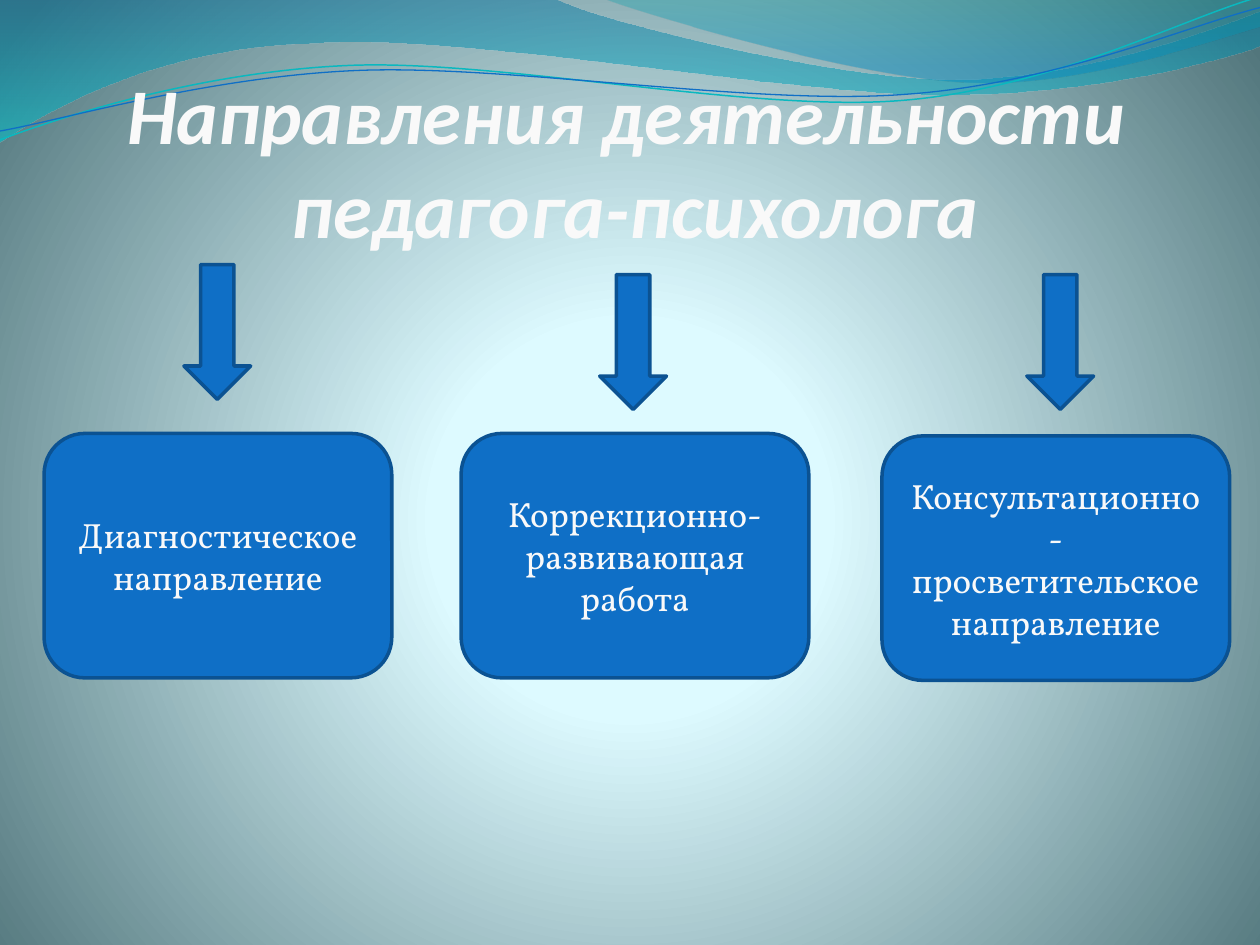
from lxml import etree
from pptx import Presentation
from pptx.dml.color import RGBColor
from pptx.enum.shapes import MSO_SHAPE
from pptx.enum.text import MSO_ANCHOR, PP_ALIGN
from pptx.oxml.ns import qn
from pptx.util import Inches, Pt

BOX, ARROW = MSO_SHAPE.ROUNDED_RECTANGLE, MSO_SHAPE.DOWN_ARROW
BOTTOM, MIDDLE = MSO_ANCHOR.BOTTOM, MSO_ANCHOR.MIDDLE
CENTER = PP_ALIGN.CENTER

HUES = {
    "text": "F9F9F9", "blue": "0F6FC6", "edge": "0B5292", "aqua": "0AB8BF",
    "glow": "DEFBFF", "pale": "DDFAFF", "slate": "52767C",
    "deep": "0074A1", "teal": "00C6CF", "green": "00A1A9", "sea": "008BBF",
}
RGB = {name: RGBColor.from_string(code) for name, code in HUES.items()}

HEAD = {"size": Pt(45), "name": "Calibri", "bold": True, "italic": True}
BODY = {"size": Pt(20), "name": "Vollkorn"}


def shade(root, stops, circle=False):
    """Fill the gradFill under root with (position, hue, alpha) stops."""
    grad = root.find(".//" + qn("a:gradFill"))
    for old in list(grad):
        grad.remove(old)
    group = etree.SubElement(grad, qn("a:gsLst"))
    for pos, hue, alpha in stops:
        stop = etree.SubElement(group, qn("a:gs"), pos=str(pos * 1000))
        tint = etree.SubElement(stop, qn("a:srgbClr"), val=HUES[hue])
        if alpha < 100:
            etree.SubElement(tint, qn("a:alpha"), val=str(alpha * 1000))
    if circle:
        ring = etree.SubElement(grad, qn("a:path"), path="circle")
        etree.SubElement(ring, qn("a:fillToRect"),
                         l="10000", t="110000", r="10000", b="100000")
    else:
        etree.SubElement(grad, qn("a:lin"), ang="5400000", scaled="0")


def write(shape, words, style, anchor):
    frame = shape.text_frame
    frame.word_wrap = True
    frame.vertical_anchor = anchor
    frame.text = words
    para = frame.paragraphs[0]
    para.alignment = CENTER
    for run in para.runs:
        run.font.color.rgb = RGB["text"]
        for key, value in style.items():
            setattr(run.font, key, value)


prs = Presentation()
prs.slide_width, prs.slide_height = Inches(10), Inches(7.5)
slide = prs.slides.add_slide(prs.slide_layouts[6])
shapes = slide.shapes

# Background glow
slide.background.fill.gradient()
shade(slide.element,
      [(0, "glow", 100), (25, "pale", 100), (100, "slate", 100)], circle=True)

# Waves: a start, then line ends (2 numbers) or Bezier curves (6 numbers)
waves = [
    ([(0, 0), (4.4, -0.01), (4.76, 0.17, 6.64, 0.63, 7.58, 0.63),
      (8.53, 0.63, 9.58, 0.26, 10, 0.09), (10.01, 0.36),
      (9.83, 0.44, 8.7, 0.76, 7.46, 0.75), (6.22, 0.75, 3.82, 0.28, 2.57, 0.34),
      (1.29, 0.36, 0.46, 0.83, -0.01, 1.13), (0, 0)],
     [(0, "deep", 45), (100, "teal", 55)], None),
    ([(4.79, -0.01), (5.09, 0.11, 6.82, 0.62, 7.69, 0.65),
      (8.56, 0.69, 9.61, 0.32, 10, 0.21), (10, 0), (4.79, -0.01)],
     [(0, "green", 30), (80, "sea", 45)], None),
    ([(0, 1.11), (0.48, 0.93, 1.58, 0.57, 2.77, 0.52),
      (3.95, 0.47, 5.93, 0.89, 7.13, 0.8), (8.33, 0.71, 9.38, 0.15, 9.98, -0.02)],
     None, ("aqua", 0.85)),
    ([(0, 1.04), (0.47, 0.96, 1.64, 0.61, 2.83, 0.56),
      (4.03, 0.51, 5.97, 0.84, 7.17, 0.75), (8.36, 0.67, 9.41, 0.21, 10, 0.06)],
     None, ("blue", 0.75)),
]
for parts, stops, pen in waves:
    ends = [(Inches(part[-2]), Inches(part[-1])) for part in parts]
    form = shapes.build_freeform(*ends[0])
    form.add_line_segments(ends[1:], close=bool(stops))
    wave = form.convert_to_shape()
    wave.shadow.inherit = False

    # Bend the segments that have control points
    lines = wave._element.spPr.findall(".//" + qn("a:lnTo"))
    for line, part in zip(lines, parts[1:]):
        if len(part) == 6:
            curve = etree.Element(qn("a:cubicBezTo"))
            for x, y in zip(part[::2], part[1::2]):
                etree.SubElement(curve, qn("a:pt"), x=str(Inches(x) - wave.left),
                                 y=str(Inches(y) - wave.top))
            line.getparent().replace(line, curve)

    if stops:
        wave.fill.gradient()
        shade(wave._element.spPr, stops)
        wave.line.fill.background()
    else:
        wave.fill.background()
        wave.line.color.rgb = RGB[pen[0]]
        wave.line.width = Pt(pen[1])

# Title
title = shapes.add_textbox(Inches(0.5), Inches(0.77), Inches(9.08), Inches(1.25))
insets = {"left": 0, "top": Inches(0.05), "right": 0, "bottom": 0}
for side, gap in insets.items():
    setattr(title.text_frame, "margin_" + side, gap)
write(title, "Направления деятельности \vпедагога-психолога", HEAD, BOTTOM)

# Directions: box left and top, arrow left and top, label
fields = [
    (0.35, 3.44, 1.46, 2.1, "Диагностическое направление"),
    (3.66, 3.44, 4.76, 2.18, "Коррекционно-развивающая работа"),
    (7, 3.46, 8.15, 2.18, "Консультационно-просветительское направление"),
]
spots = [(BOX, left, top, 2.76, 1.94, label) for left, top, _, _, label in fields]
spots += [(ARROW, tip, high, 0.53, 1.07, None) for _, _, tip, high, _ in fields]
for kind, left, top, width, height, label in spots:
    shape = shapes.add_shape(kind, Inches(left), Inches(top),
                             Inches(width), Inches(height))
    shape.shadow.inherit = False
    shape.fill.solid()
    shape.fill.fore_color.rgb = RGB["blue"]
    shape.line.color.rgb = RGB["edge"]
    shape.line.width = Pt(2)
    if label:
        write(shape, label, BODY, MIDDLE)

prs.save("out.pptx")
